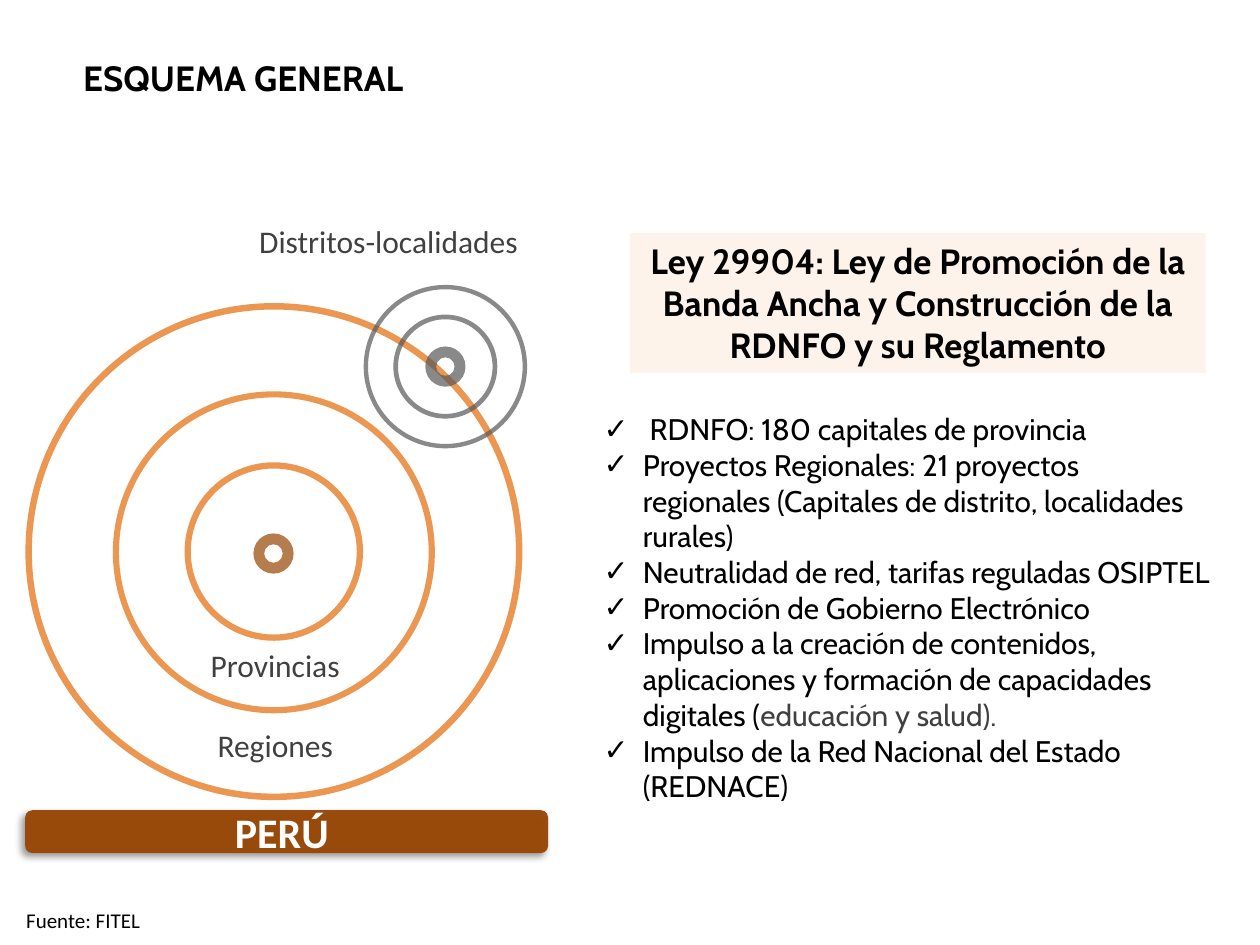
from lxml.etree import SubElement
from pptx import Presentation
from pptx.dml.color import RGBColor
from pptx.enum.shapes import MSO_SHAPE
from pptx.enum.text import MSO_ANCHOR, MSO_AUTO_SIZE, PP_ALIGN
from pptx.oxml import parse_xml
from pptx.oxml.ns import nsdecls, qn
from pptx.util import Pt

BLACK = RGBColor(0x00, 0x00, 0x00)
WHITE = RGBColor(0xFF, 0xFF, 0xFF)
DARK_GRAY = RGBColor(0x40, 0x40, 0x40)
RING_GRAY = RGBColor(0x59, 0x59, 0x59)
ORANGE = RGBColor(0xE4, 0x6C, 0x0A)
BROWN = RGBColor(0x98, 0x48, 0x07)
PEACH = RGBColor(0xFA, 0xC0, 0x90)


def write(paragraph, text, **formats):
    span = paragraph.add_run()
    span.text = text
    color = formats.pop("color")
    for name, value in formats.items():
        setattr(span.font, name, value)
    span.font.color.rgb = color


def add_filled(kind, left, top, width, height, color=None, opacity=100):
    shape = page.shapes.add_shape(kind, Pt(left), Pt(top), Pt(width), Pt(height))
    shape.shadow.inherit = False
    shape.line.fill.background()
    if color is None:
        shape.fill.background()
    else:
        shape.fill.solid()
        shape.fill.fore_color.rgb = color
        fill_color = shape.fill._xPr.find(qn("a:solidFill"))[0]
        SubElement(fill_color, qn("a:alpha"), val=str(opacity * 1000))
    return shape


deck = Presentation()
deck.slide_width, deck.slide_height = Pt(720), Pt(540)
page = deck.slides.add_slide(deck.slide_layouts[1])
title, body = page.placeholders[0], page.placeholders[1]

placements = [
    (title, 40.3, 28.8, 247.7, 31.7),
    (body, 337.7, 231.2, 362.9, 234),
]
for box, left, top, width, height in placements:
    box.left, box.top, box.width, box.height = Pt(left), Pt(top), Pt(width), Pt(height)
    box.text_frame.auto_size = MSO_AUTO_SIZE.NONE
    box.text_frame.vertical_anchor = MSO_ANCHOR.TOP

heading = title.text_frame.paragraphs[0]
heading.alignment = PP_ALIGN.LEFT
write(heading, "ESQUEMA GENERAL", name="Cabin", size=Pt(20), bold=True, color=BLACK)

source = page.shapes.add_textbox(Pt(7.9), Pt(514.8), Pt(80), Pt(21.6))
source.text_frame.word_wrap = False
write(source.text_frame.paragraphs[0], "Fuente: FITEL",
      name="Calibri", size=Pt(12), color=BLACK)

rings = [
    (156.5, 315.2, 284, 0.013, ORANGE),
    (156.5, 315.6, 184, 0.019, ORANGE),
    (156.5, 315.2, 102, 0.035, ORANGE),
    (254.5, 209.5, 93.4, 0.027, RING_GRAY),
    (254.5, 209.5, 59.4, 0.045, RING_GRAY),
    (254.5, 209.5, 23, 0.27, RING_GRAY),
    (156.3, 316.3, 23, 0.27, BROWN),
]
for center_x, center_y, size, thickness, color in rings:
    ring = add_filled(MSO_SHAPE.DONUT, center_x - size / 2, center_y - size / 2,
                      size, size, color, 71)
    ring.adjustments[0] = thickness

country = add_filled(MSO_SHAPE.ROUNDED_RECTANGLE, 14.4, 463, 298.8, 24.5, BROWN, 97)
effects = country._element.spPr.find(qn("a:effectLst"))
effects.append(parse_xml(
    f'<a:outerShdw {nsdecls("a")} blurRad="{Pt(4)}" dist="{Pt(3)}" dir="8100000" '
    'algn="tr" rotWithShape="0"><a:srgbClr val="000000"><a:alpha val="40000"/>'
    '</a:srgbClr></a:outerShdw>'))

label_format = {"name": "Calibri", "size": Pt(18), "color": DARK_GRAY}
country_format = {"name": "Calibri", "size": Pt(24), "bold": True, "color": WHITE}
law_format = {"name": "Cabin", "size": Pt(20), "bold": True, "color": BLACK}

captions = [(country, "PERÚ ", country_format)]
for text, left, top, width in [
    ("Distritos-localidades", 133.2, 123.8, 177.8),
    ("Regiones", 112.3, 411.8, 90),
    ("Provincias", 107.3, 366.5, 100),
]:
    label = add_filled(MSO_SHAPE.ROUNDED_RECTANGLE, left, top, width, 27.4)
    captions.append((label, text, label_format))
for shape, text, formats in captions:
    frame = shape.text_frame
    frame.word_wrap = False
    frame.vertical_anchor = MSO_ANCHOR.MIDDLE
    frame.paragraphs[0].alignment = PP_ALIGN.CENTER
    write(frame.paragraphs[0], text, **formats)

law = add_filled(MSO_SHAPE.RECTANGLE, 360, 133.2, 329, 80, PEACH, 19)
law.text_frame.word_wrap = True
law.text_frame.vertical_anchor = MSO_ANCHOR.TOP
law.text_frame.paragraphs[0].alignment = PP_ALIGN.CENTER
write(law.text_frame.paragraphs[0],
      "Ley 29904: Ley de Promoción de la Banda Ancha y Construcción de la "
      "RDNFO y su Reglamento", **law_format)

points = [
    [(" RDNFO: 180 capitales de provincia", BLACK)],
    [("Proyectos Regionales: 21 proyectos regionales (Capitales de distrito, "
      "localidades rurales)", BLACK)],
    [("Neutralidad de red, tarifas reguladas OSIPTEL", BLACK)],
    [("Promoción de Gobierno Electrónico", BLACK)],
    [("Impulso a la creación de contenidos, aplicaciones y formación de "
      "capacidades digitales (", BLACK), ("educación y salud).", DARK_GRAY)],
    [("Impulso de la Red Nacional del Estado (REDNACE)", BLACK)],
]
for index, parts in enumerate(points):
    frame = body.text_frame
    paragraph = frame.add_paragraph() if index else frame.paragraphs[0]
    paragraph.space_before = Pt(0)
    properties = paragraph._p.get_or_add_pPr()
    properties.set("marL", str(Pt(22.5)))
    properties.set("indent", str(Pt(-22.5)))
    SubElement(properties, qn("a:buChar"), char="✓")
    for text, color in parts:
        write(paragraph, text, name="Cabin", size=Pt(17), color=color)

deck.save("out.pptx")
